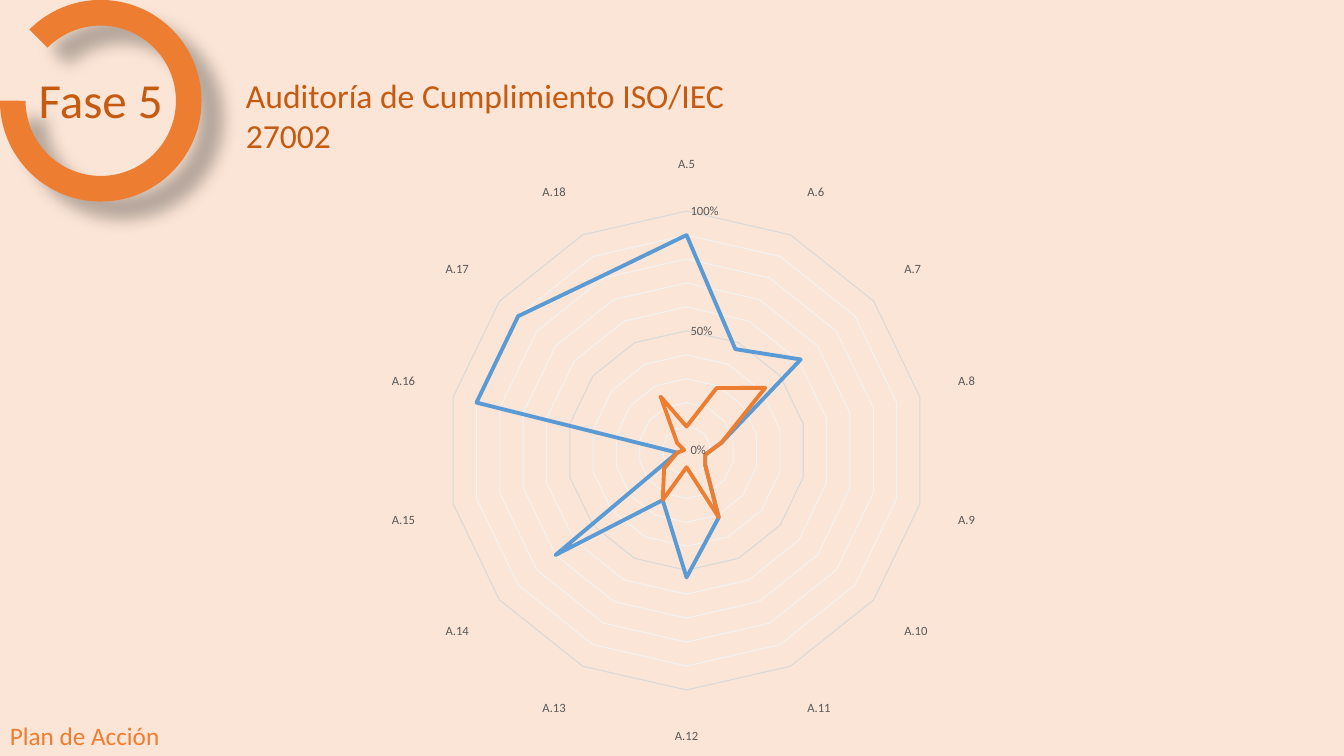
from dataclasses import dataclass

from lxml.etree import SubElement
from pptx import Presentation
from pptx.chart.data import CategoryChartData
from pptx.dml.color import RGBColor
from pptx.enum.chart import XL_CHART_TYPE as ChartType, XL_TICK_MARK as TickMark
from pptx.enum.shapes import MSO_SHAPE as Preset
from pptx.enum.text import MSO_ANCHOR as Anchor, MSO_AUTO_SIZE as AutoSize, PP_ALIGN as Align
from pptx.oxml.ns import qn
from pptx.util import Pt


@dataclass(frozen=True)
class Theme:
    """Colours, font and type sizes of the slide."""
    background: str = "FBE5D6"
    orange: str = "ED7D31"
    dark_orange: str = "C55A11"
    blue: str = "5B9BD5"
    grid: str = "D9D9D9"
    minor_grid: str = "F2F2F2"
    label: str = "595959"
    shadow: str = "000000"
    font: str = "Calibri"
    phase_size: float = 35
    title_size: float = 24
    footer_size: float = 18
    chart_size: float = 10
    label_size: float = 9


THEME = Theme()
CONTROLS = [f"A.{number}" for number in range(5, 19)]
SERIES = [
    ("Series 1", THEME.blue,
     (0.9, 0.47, 0.61, 0.15, 0.08, 0.1, 0.31, 0.53, 0.23, 0.7, 0.04, 0.9, 0.9, 0.81)),
    ("Series 2", THEME.orange,
     (0.1, 0.29, 0.42, 0.15, 0.08, 0.1, 0.31, 0.07, 0.23, 0.12, 0.04, 0.01, 0.05, 0.25)),
]


def points(*lengths):
    """Turn numbers into lengths in points."""
    return [Pt(length) for length in lengths]


def apply(target, values):
    """Set the attributes of target from a dict."""
    for name, value in values.items():
        setattr(target, name, value)


def format_font(font, size, color):
    """Give a font the theme typeface, a size and a colour."""
    apply(font, {"name": THEME.font, "size": Pt(size), "bold": False})
    font.color.rgb = RGBColor.from_string(color)


def format_line(line, color, width):
    """Give a line a colour and a width."""
    line.color.rgb = RGBColor.from_string(color)
    line.width = Pt(width)


def write_text(shape, text, size, color, frame_format, paragraph_format):
    """Fill a shape with one formatted paragraph."""
    frame = shape.text_frame
    frame.text = text
    apply(frame, {"word_wrap": True, "auto_size": AutoSize.NONE, **frame_format})
    paragraph = frame.paragraphs[0]
    apply(paragraph, paragraph_format)
    format_font(paragraph.runs[0].font, size, color)


def add_label(slide, box, *text_format):
    """Add a text box with one formatted paragraph."""
    write_text(slide.shapes.add_textbox(*points(*box)), *text_format)


def place_title(slide, box, *text_format):
    """Move the title placeholder and write its text."""
    title = slide.shapes.title
    apply(title, dict(zip(("left", "top", "width", "height"), points(*box))))
    write_text(title, *text_format)


def add_ring(slide, box, adjustments):
    """Add an open ring with a soft shadow."""
    ring = slide.shapes.add_shape(Preset.BLOCK_ARC, *points(*box))
    for index, value in enumerate(adjustments):
        ring.adjustments[index] = value
    ring.fill.solid()
    ring.fill.fore_color.rgb = RGBColor.from_string(THEME.orange)
    ring.line.fill.background()
    ring.shadow.inherit = False
    effects = ring.element.spPr.find(qn("a:effectLst"))
    shadow = SubElement(effects, qn("a:outerShdw"), blurRad=str(Pt(11.8)), dist=str(Pt(19.7)),
                        dir=str(40 * 60000), algn="tl", rotWithShape="0")
    color = SubElement(shadow, qn("a:srgbClr"), val=THEME.shadow)
    SubElement(color, qn("a:alpha"), val="28000")


def format_minor_grid(axis, color, width):
    """Give the minor grid lines of an axis a colour and a width."""
    axis.has_minor_gridlines = True
    grid = axis._element.find(qn("c:minorGridlines"))
    line = SubElement(SubElement(grid, qn("c:spPr")), qn("a:ln"), w=str(Pt(width)))
    SubElement(SubElement(line, qn("a:solidFill")), qn("a:srgbClr"), val=color)


def format_axes(chart):
    """Set scale, labels and grid lines of the radar axes."""
    marks = {"major_tick_mark": TickMark.NONE, "minor_tick_mark": TickMark.NONE}
    controls, scale = chart.category_axis, chart.value_axis
    apply(controls, {**marks, "has_major_gridlines": False})
    apply(scale, {**marks, "minimum_scale": 0, "maximum_scale": 1, "major_unit": 0.5,
                  "minor_unit": 0.1, "has_major_gridlines": True})
    for axis in (controls, scale):
        format_font(axis.tick_labels.font, THEME.label_size, THEME.label)
    apply(scale.tick_labels, {"number_format": "0%", "number_format_is_linked": False})
    format_line(controls.format.line, THEME.grid, 1)
    scale.format.line.fill.background()
    format_line(scale.major_gridlines.format.line, THEME.grid, 0.75)
    format_minor_grid(scale, THEME.minor_grid, 0.75)


def add_radar(slide, box):
    """Add the radar chart of compliance per control."""
    data = CategoryChartData(number_format="0%")
    data.categories = CONTROLS
    for name, _, values in SERIES:
        data.add_series(name, values)
    chart = slide.shapes.add_chart(ChartType.RADAR, *points(*box), data).chart
    apply(chart, {"has_legend": False, "has_title": False})
    format_font(chart.font, THEME.chart_size, THEME.shadow)
    format_axes(chart)
    for series, (_, color, _) in zip(chart.plots[0].series, SERIES):
        series.smooth = False
        format_line(series.format.line, color, 2.75)


def main():
    """Build the slide and save it."""
    presentation = Presentation()
    apply(presentation, {"slide_width": Pt(960), "slide_height": Pt(540)})
    slide = presentation.slides.add_slide(presentation.slide_layouts.get_by_name("Title Only"))
    fill = slide.background.fill
    fill.solid()
    fill.fore_color.rgb = RGBColor.from_string(THEME.background)

    margins = dict.fromkeys(("margin_left", "margin_top", "margin_right", "margin_bottom"), Pt(1.4))
    left = {"alignment": Align.LEFT}
    add_ring(slide, (0, 0, 144, 144), (135, 108, 0.127))
    add_label(slide, (25.2, 49.7, 93.6, 46.8), "Fase 5", THEME.phase_size, THEME.dark_orange,
              {"vertical_anchor": Anchor.MIDDLE, **margins},
              {"alignment": Align.CENTER, "line_spacing": 0.9})
    place_title(slide, (168.5, 49.7, 363.6, 65.5), "Auditoría de Cumplimiento ISO/IEC 27002",
                THEME.title_size, THEME.dark_orange, {"vertical_anchor": Anchor.TOP}, left)
    add_radar(slide, (79.9, 103.7, 816.5, 436.3))
    add_label(slide, (0, 511.2, 128.9, 28.8), "Plan de Acción",
              THEME.footer_size, THEME.orange, {}, left)
    presentation.save("out.pptx")


if __name__ == "__main__":
    main()
